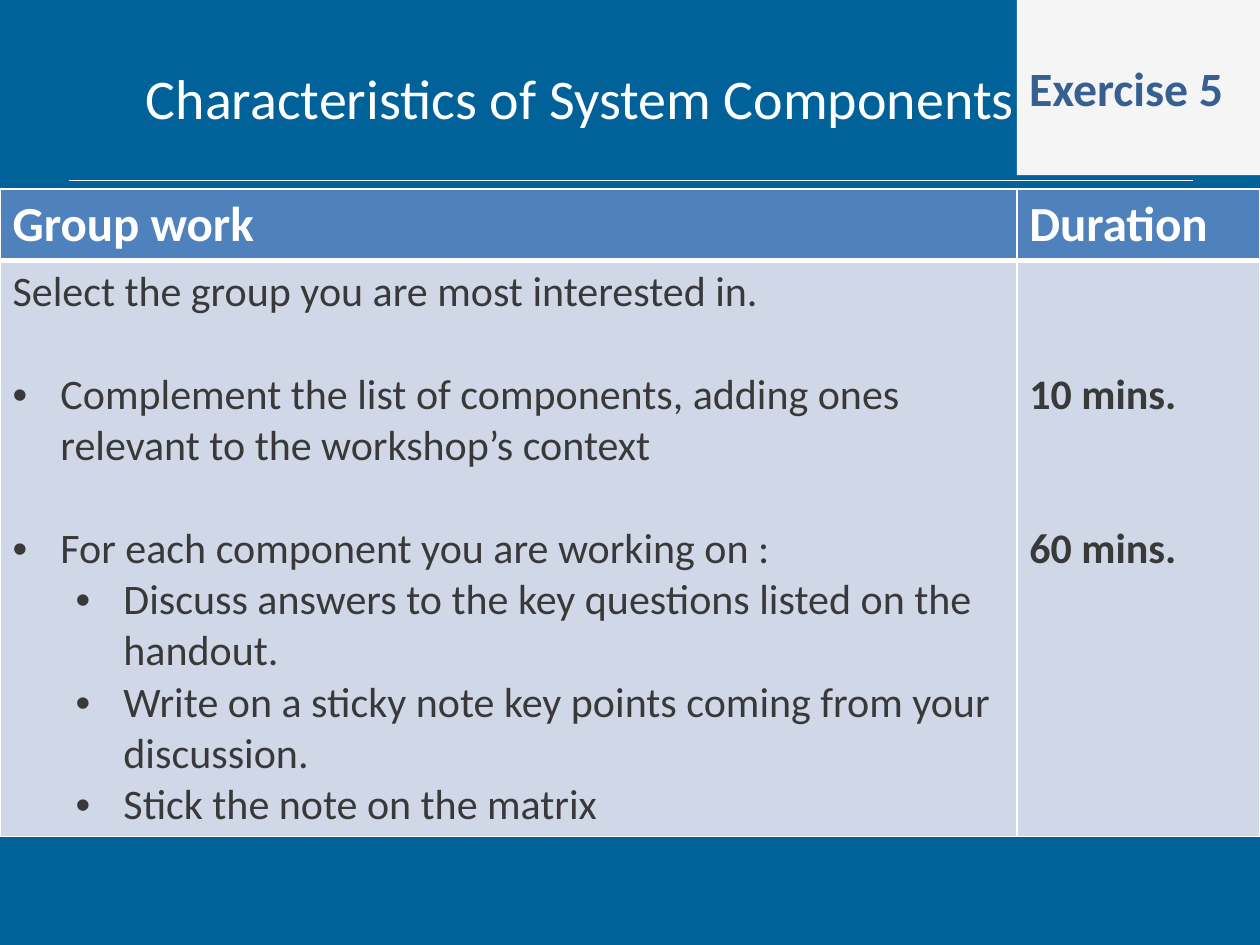
from dataclasses import dataclass

from lxml import etree
from pptx import Presentation
from pptx.dml.color import RGBColor
from pptx.enum.shapes import MSO_CONNECTOR, MSO_SHAPE
from pptx.enum.text import MSO_ANCHOR, PP_ALIGN
from pptx.oxml.ns import qn
from pptx.util import Inches, Pt

STRAIGHT = MSO_CONNECTOR.STRAIGHT
RECTANGLE = MSO_SHAPE.RECTANGLE
MIDDLE = MSO_ANCHOR.MIDDLE
LEFT = PP_ALIGN.LEFT

WHITE = RGBColor(0xFF, 0xFF, 0xFF)
BACKGROUND = RGBColor(0x00, 0x62, 0x99)
BADGE_FILL = RGBColor(0xF5, 0xF5, 0xF5)
BADGE_TEXT = RGBColor(0x37, 0x60, 0x92)
HEADER_FILL = RGBColor(0x4F, 0x81, 0xBD)
BODY_FILL = RGBColor(0xD0, 0xD8, 0xE8)
BODY_TEXT = RGBColor(0x39, 0x39, 0x39)

FONT = "Calibri"
TITLE_FORMAT = {"name": FONT, "size": Pt(32), "bold": False}
BADGE_FORMAT = {"name": FONT, "size": Pt(27.3), "bold": True}
HEADER_FORMAT = {"name": FONT, "size": Pt(28), "bold": True}
TASK_FORMAT = {"name": FONT, "size": Pt(24), "bold": False}
TIME_FORMAT = {**TASK_FORMAT, "bold": True}

MAIN_WIDTH, SIDE_WIDTH = 8.07, 1.93
TABLE_TOP, HEADER_HEIGHT, BODY_HEIGHT = 1.5, 0.57, 4.57
LINE_POINTS = 29.3
CELL_MARGIN = 0.05
HANGING = 0.38


@dataclass
class Line:
    text: str
    indent: float = 0
    lines_before: int = 0


@dataclass
class CellSpec:
    lines: list[Line]
    fill: RGBColor
    color: RGBColor
    fmt: dict
    borders: dict[str, float]
    lines_above: int = 0


HEADER_BORDERS = {"lnL": 1, "lnR": 1, "lnT": 1, "lnB": 3}
BODY_BORDERS = {"lnL": 1, "lnR": 1, "lnT": 3, "lnB": 1}

TASKS = [
    Line("Select the group you are most interested in."),
    Line("Complement the list of components, adding ones relevant to the workshop’s context", 0.38, 1),
    Line("For each component you are working on :", 0.38, 1),
    Line("Discuss answers to the key questions listed on the handout.", 0.88),
    Line("Write on a sticky note key points coming from your discussion.", 0.88),
    Line("Stick the note on the matrix", 0.88),
]
TIMES = [Line("10 mins."), Line("60 mins.", lines_before=2)]

ROWS = [
    [CellSpec([Line(label)], HEADER_FILL, WHITE, HEADER_FORMAT, HEADER_BORDERS)
     for label in ("Group work", "Duration")],
    [CellSpec(TASKS, BODY_FILL, BODY_TEXT, TASK_FORMAT, BODY_BORDERS),
     CellSpec(TIMES, BODY_FILL, BODY_TEXT, TIME_FORMAT, BODY_BORDERS, 2)],
]


def add_bullet(p, indent: float) -> None:
    pPr = p._p.get_or_add_pPr()
    pPr.set("marL", str(Inches(indent)))
    pPr.set("indent", str(-Inches(HANGING)))
    etree.SubElement(pPr, qn("a:buFont"), typeface="Arial")
    etree.SubElement(pPr, qn("a:buChar"), char="•")


def write(tf, lines: list[Line], color: RGBColor, fmt: dict) -> None:
    for i, line in enumerate(lines):
        p = tf.add_paragraph() if i else tf.paragraphs[0]
        p.alignment = LEFT
        if line.indent:
            add_bullet(p, line.indent)
        if line.lines_before:
            p.space_before = Pt(LINE_POINTS * line.lines_before)
        r = p.add_run()
        r.text = line.text
        for name, value in fmt.items():
            setattr(r.font, name, value)
        r.font.color.rgb = color


def add_border(cell, side: str, points: float) -> None:
    tcPr = cell._tc.get_or_add_tcPr()
    ln = etree.SubElement(tcPr, qn(f"a:{side}"), w=str(Pt(points)))
    fill = etree.SubElement(ln, qn("a:solidFill"))
    etree.SubElement(fill, qn("a:srgbClr"), val=str(WHITE))


def fill_cell(cell, spec: CellSpec) -> None:
    for side, points in spec.borders.items():
        add_border(cell, side, points)
    cell.fill.solid()
    cell.fill.fore_color.rgb = spec.fill
    cell.margin_top = Inches(CELL_MARGIN) + Pt(LINE_POINTS * spec.lines_above)
    write(cell.text_frame, spec.lines, spec.color, spec.fmt)


def add_rule(s) -> None:
    rule = s.shapes.add_connector(STRAIGHT, Inches(0.55), Inches(1.43), Inches(9.47), Inches(1.43))
    rule.line.color.rgb = WHITE
    rule.line.width = Pt(0.5)
    etree.SubElement(rule._element.spPr, qn("a:effectLst"))


def add_title(s) -> None:
    sp = s.shapes.add_textbox(Inches(1.06), Inches(0.21), Inches(7.17), Inches(1.12))
    tf = sp.text_frame
    tf.word_wrap = True
    tf.vertical_anchor = MIDDLE
    write(tf, [Line("Characteristics of System Components")], WHITE, TITLE_FORMAT)


def add_badge(s) -> None:
    sp = s.shapes.add_shape(RECTANGLE, Inches(MAIN_WIDTH), 0, Inches(SIDE_WIDTH), Inches(1.39))
    sp.shadow.inherit = False
    sp.fill.solid()
    sp.fill.fore_color.rgb = BADGE_FILL
    sp.line.fill.background()
    sp.text_frame.vertical_anchor = MIDDLE
    write(sp.text_frame, [Line("Exercise 5")], BADGE_TEXT, BADGE_FORMAT)


def add_schedule(s) -> None:
    table = s.shapes.add_table(
        len(ROWS), len(ROWS[0]), 0, Inches(TABLE_TOP),
        Inches(MAIN_WIDTH + SIDE_WIDTH), Inches(HEADER_HEIGHT + BODY_HEIGHT),
    ).table
    for column, width in zip(table.columns, (MAIN_WIDTH, SIDE_WIDTH)):
        column.width = Inches(width)
    for row, height, specs in zip(table.rows, (HEADER_HEIGHT, BODY_HEIGHT), ROWS):
        row.height = Inches(height)
        for cell, spec in zip(row.cells, specs):
            fill_cell(cell, spec)


def main() -> None:
    prs = Presentation()
    prs.slide_width, prs.slide_height = Inches(10), Inches(7.5)
    s = prs.slides.add_slide(prs.slide_layouts[6])
    s.background.fill.solid()
    s.background.fill.fore_color.rgb = BACKGROUND
    add_rule(s)
    add_title(s)
    add_badge(s)
    add_schedule(s)
    prs.save("out.pptx")


if __name__ == "__main__":
    main()
